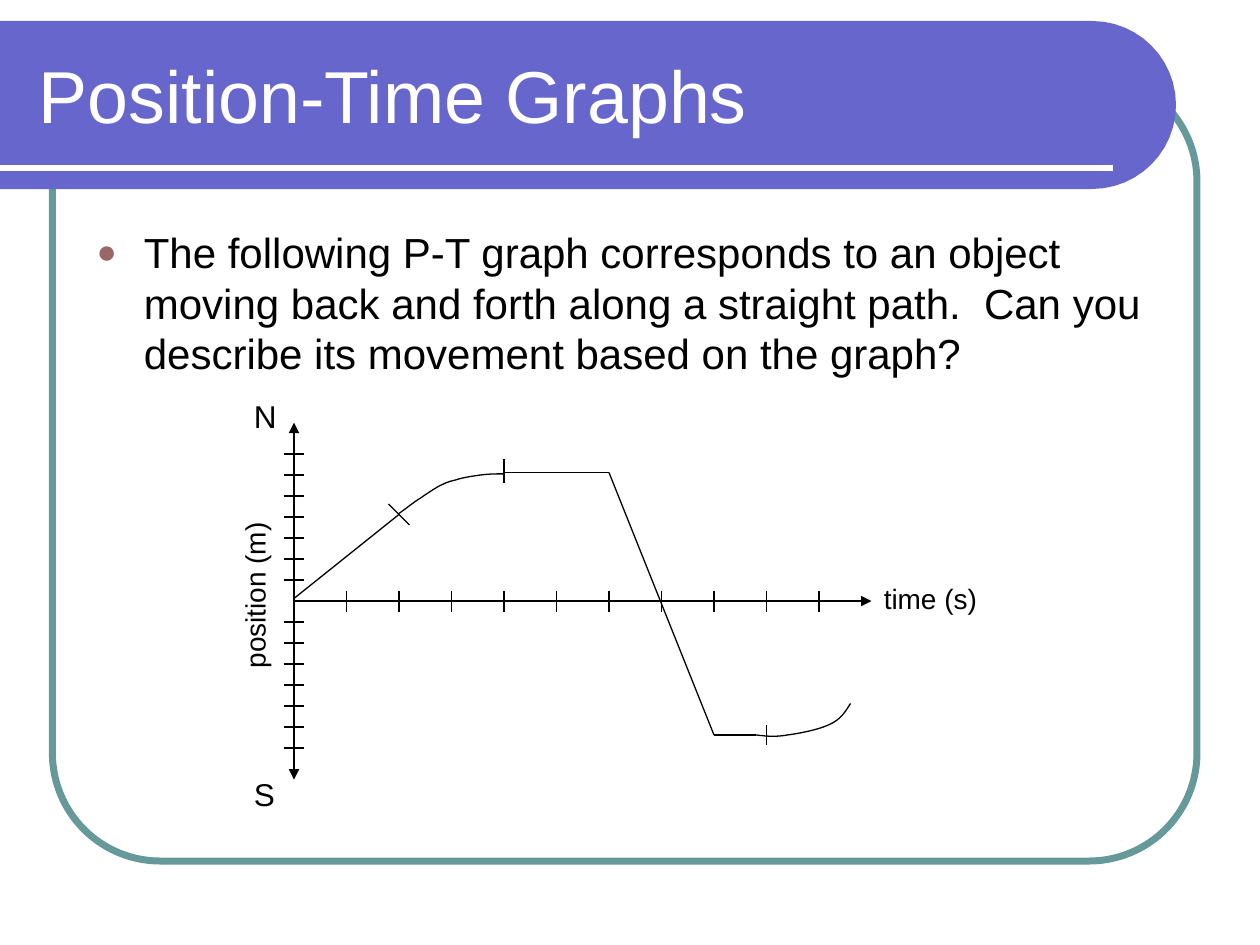
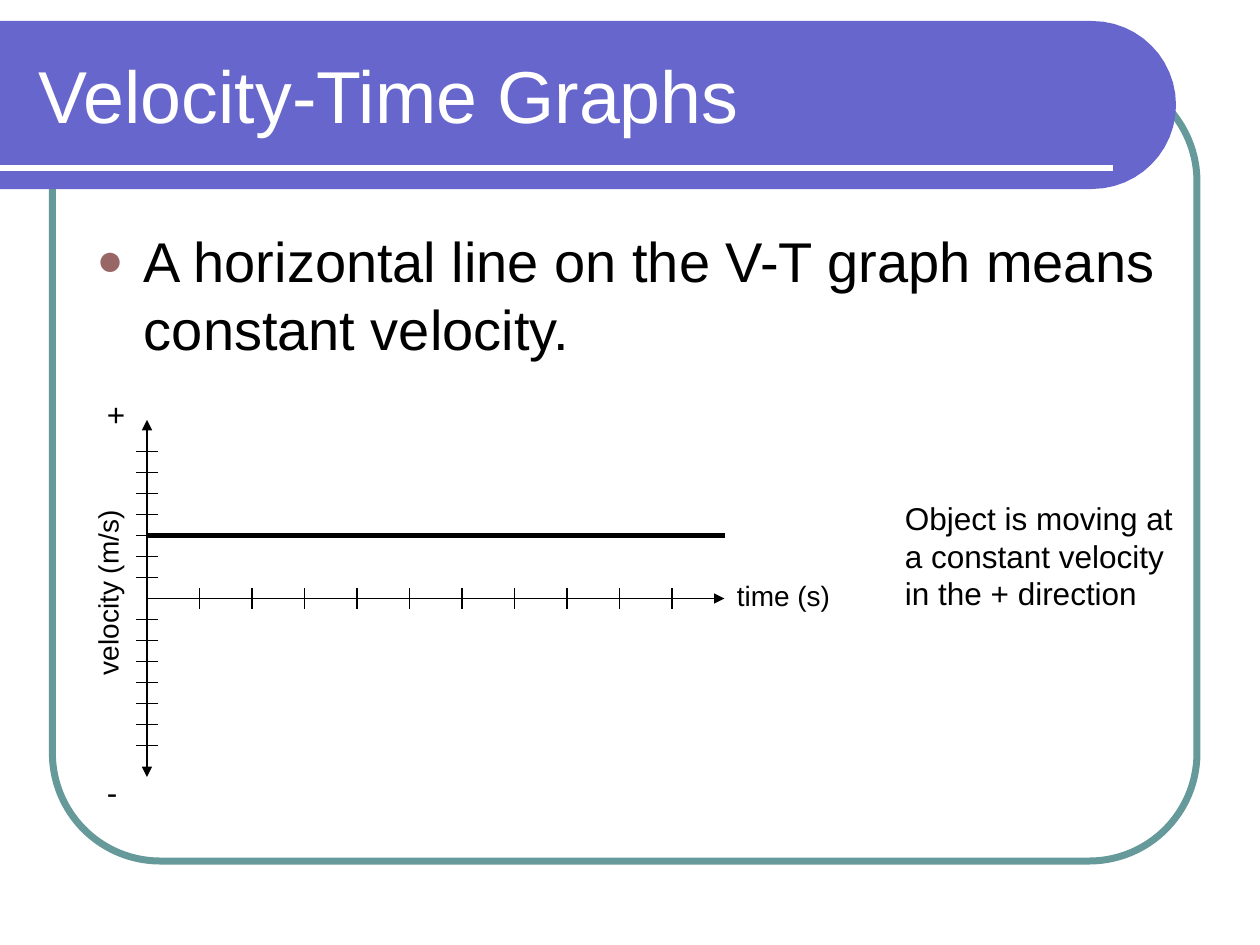
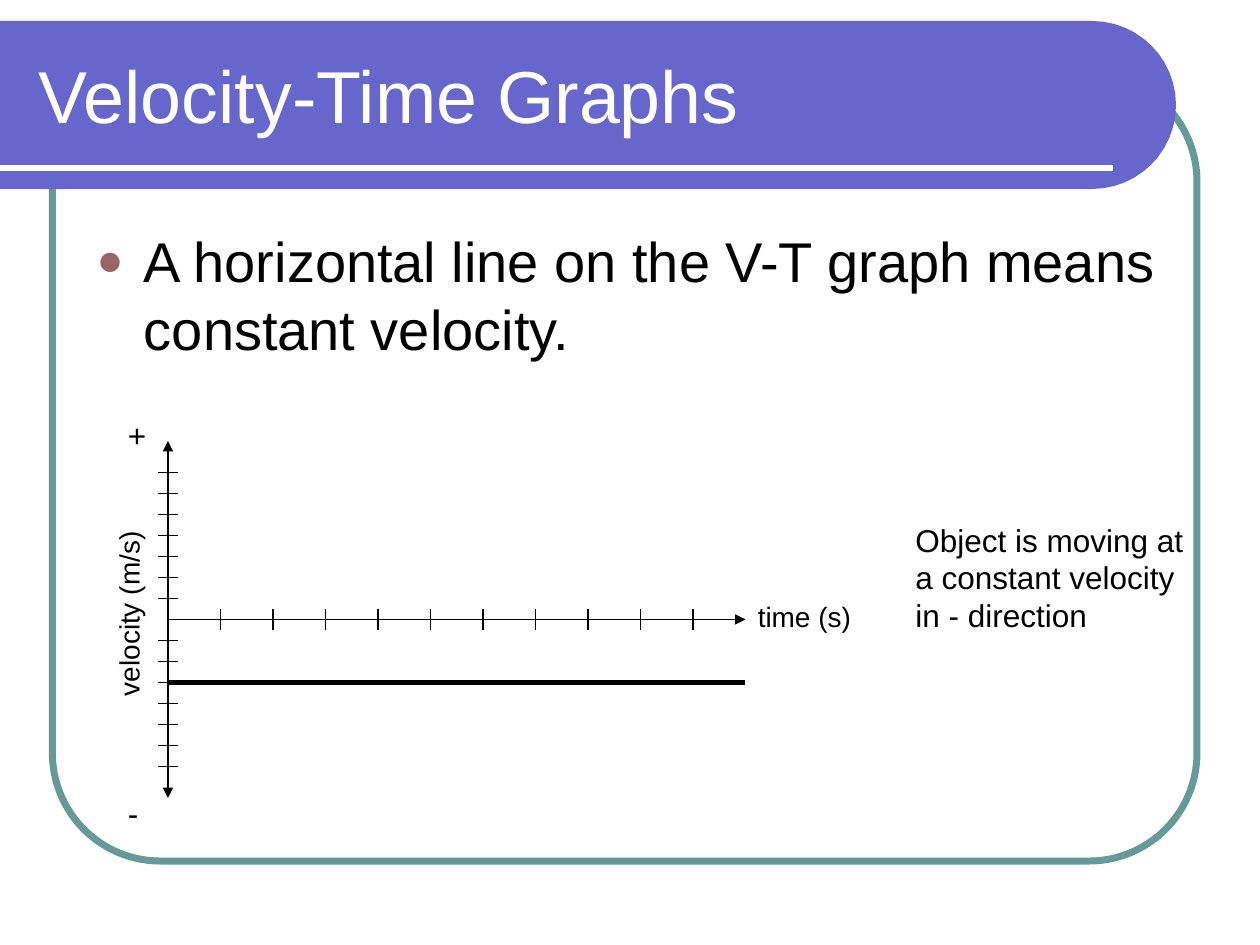
from lxml import etree
from pptx import Presentation
from pptx.dml.color import RGBColor
from pptx.enum.shapes import MSO_CONNECTOR, MSO_SHAPE
from pptx.enum.text import MSO_ANCHOR, MSO_AUTO_SIZE, PP_ALIGN
from pptx.oxml.ns import qn
from pptx.util import Pt

LINE = MSO_CONNECTOR.STRAIGHT
ROUND = MSO_SHAPE.ROUNDED_RECTANGLE
TOP, MIDDLE = MSO_ANCHOR.TOP, MSO_ANCHOR.MIDDLE
LEFT, CENTER = PP_ALIGN.LEFT, PP_ALIGN.CENTER
FIXED = MSO_AUTO_SIZE.NONE

BLACK = RGBColor(0x00, 0x00, 0x00)
WHITE = RGBColor(0xFF, 0xFF, 0xFF)
BLUE = RGBColor(0x66, 0x66, 0xCC)
TEAL = RGBColor(0x66, 0x99, 0x99)
ROSE = RGBColor(0x99, 0x66, 0x66)
FONT = "Arial"

STEP_X, STEP_Y, TICK = 30, 12, 6
REACH_X, REACH_Y = 330, 102
TICKS_X, TICKS_Y = 10, 7

BAND = [
    (624, 12), (650.5, 12), (672, 33.5), (672, 60),
    (672, 86.5), (650.5, 108), (624, 108),
]
SLOWING = [
    (59.5, -49.7), (61.7, -51.1), (68.9, -56.9), (72.5, -59),
    (76.8, -62), (79, -63.4), (82.5, -65.5),
    (85.5, -67), (88.3, -68.4), (92, -69.1),
    (96.3, -70.6), (101.3, -71.3), (106.3, -72),
    (110.7, -72.7), (117.1, -72.7), (119.3, -72.7),
]
TURNING = [
    (264, 76.5), (270, 77.2), (274.8, 77.8), (282, 76.5),
    (289.2, 75.6), (300, 73.4), (306, 70.5),
    (312.3, 67.7), (315, 63.4), (318, 58.5),
]
MOTION = [
    ((0, -1.5), (60, -49.5)),
    ((120, -67.5), (120, -81)),
    ((54, -55.5), (66, -43.5)),
    ((120, -73.5), (180, -73.5)),
    ((180, -73.5), (240, 76.5)),
    ((240, 76.5), (264, 76.5)),
    ((270, 70.5), (270, 82.5)),
]
STEADY = "A horizontal line on the V-T graph means constant velocity."

SLIDES = [
    dict(
        title="Position-Time Graphs",
        body="The following P-T graph corresponds to an object moving back and "
             "forth along a straight path.  Can you describe its movement based "
             "on the graph?",
        size=24, depth=102, origin=(168, 343.5),
        name="position (m)", ends=("N", "S"),
        lines=MOTION, curves=[SLOWING, TURNING], weight=0.75,
    ),
    dict(
        title="Velocity-Time Graphs", body=STEADY,
        size=32, depth=348, origin=(84, 342),
        name="velocity (m/s)", ends=("+", "-"),
        lines=[((0, -36), (REACH_X, -36))], curves=[], weight=3,
        note="Object is moving at a constant velocity in the + direction",
        spot=(510, 281.5),
    ),
    dict(
        title="Velocity-Time Graphs", body=STEADY,
        size=32, depth=348, origin=(96, 354),
        name="velocity (m/s)", ends=("+", "-"),
        lines=[((0, 36), (REACH_X, 36))], curves=[], weight=3,
        note="Object is moving at a constant velocity in - direction",
        spot=(516, 294),
    ),
]


def write(shape, text, size=18, color=BLACK, align=LEFT, anchor=TOP):
    frame = shape.text_frame
    frame.word_wrap = True
    frame.auto_size = FIXED
    frame.vertical_anchor = anchor
    para = frame.paragraphs[0]
    para.alignment = align
    run = para.add_run()
    run.text = text
    run.font.name = FONT
    run.font.size = Pt(size)
    run.font.color.rgb = color
    return para


def place(shape, *box):
    shape.left, shape.top, shape.width, shape.height = map(Pt, box)


def label(shapes, text, box, turn=0, **style):
    area = shapes.add_textbox(*map(Pt, box))
    area.rotation = turn
    write(area, text, **style)


def add_line(shapes, start, end, color=BLACK, weight=0.75, heads=()):
    link = shapes.add_connector(LINE, *map(Pt, (*start, *end)))
    link.line.color.rgb = color
    link.line.width = Pt(weight)
    pen = link.line._get_or_add_ln()
    for head in heads:
        etree.SubElement(pen, qn("a:" + head), type="triangle")
    etree.SubElement(link._element.spPr, qn("a:effectLst"))


def bend(knots, count=12):
    points = [knots[0]]
    for i in range(0, len(knots) - 1, 3):
        for n in range(1, count + 1):
            t = n / count
            parts = ((1 - t) ** 3, 3 * t * (1 - t) ** 2, 3 * t * t * (1 - t), t ** 3)
            points.append(tuple(
                sum(part * knot[axis] for part, knot in zip(parts, knots[i:i + 4]))
                for axis in (0, 1)
            ))
    return points


def trace(shapes, points, close=False):
    first, *rest = [(Pt(x), Pt(y)) for x, y in points]
    pen = shapes.build_freeform(*first)
    pen.add_line_segments(rest, close=close)
    shape = pen.convert_to_shape()
    shape.shadow.inherit = False
    return shape


def add_frame(slide, layout):
    group = slide.shapes.add_group_shape()
    shapes = group.shapes
    border = shapes.add_shape(ROUND, *map(Pt, (30, 42, 654, 450)))
    border.adjustments[0] = 0.137
    border.shadow.inherit = False
    border.fill.background()
    border.line.color.rgb = TEAL
    border.line.width = Pt(4)
    band = trace(shapes, [(0, 12), *bend(BAND), (0, 108)], close=True)
    band.fill.solid()
    band.fill.fore_color.rgb = BLUE
    band.line.fill.background()
    add_line(shapes, (0, 96), (636, 96), color=WHITE, weight=3)
    layout.shapes._spTree.insert(2, group._element)


def add_text(slide, data):
    title, body = slide.placeholders
    place(title, 15, 18, 631.5, 72)
    write(title, data["title"], size=42, color=WHITE, anchor=MIDDLE)
    place(body, 48, 126, 624, data["depth"])
    para = write(body, data["body"], size=data["size"])
    props = para._p.get_or_add_pPr()
    props.set("marL", str(Pt(27)))
    props.set("indent", str(Pt(-27)))
    tint = etree.SubElement(props, qn("a:buClr"))
    etree.SubElement(tint, qn("a:srgbClr"), val=str(ROSE))
    etree.SubElement(props, qn("a:buSzPct"), val="80000")
    etree.SubElement(props, qn("a:buChar"), char="●")


def add_graph(slide, data):
    left, base = data["origin"]
    shapes = slide.shapes.add_group_shape().shapes

    def at(x, y):
        return left + x, base + y

    add_line(shapes, at(0, -REACH_Y), at(0, REACH_Y), heads=("headEnd", "tailEnd"))
    add_line(shapes, at(0, 0), at(REACH_X, 0), heads=("tailEnd",))
    for n in range(1, TICKS_Y + 1):
        for y in (-n * STEP_Y, n * STEP_Y):
            add_line(shapes, at(-TICK, y), at(TICK, y))
    for n in range(1, TICKS_X + 1):
        add_line(shapes, at(n * STEP_X, -TICK), at(n * STEP_X, TICK))

    label(shapes, "time (s)", (*at(REACH_X, -15), 72, 26.5), size=16)
    label(shapes, data["name"], (*at(-79.5, -16.5), 114, 26.5),
          turn=270, size=16, align=CENTER)
    for text, y in zip(data["ends"], (-120, 96)):
        label(shapes, text, (*at(-30, y), 30, 29))

    for start, end in data["lines"]:
        add_line(shapes, at(*start), at(*end), weight=data["weight"])
    for knots in data["curves"]:
        curve = trace(shapes, [at(*point) for point in bend(knots)])
        curve.fill.background()
        curve.line.color.rgb = BLACK
        curve.line.width = Pt(0.75)


def main():
    deck = Presentation()
    deck.slide_width, deck.slide_height = Pt(720), Pt(540)
    layout = deck.slide_layouts[1]
    for i, data in enumerate(SLIDES):
        slide = deck.slides.add_slide(layout)
        if i == 0:
            add_frame(slide, layout)
        add_text(slide, data)
        add_graph(slide, data)
        if "note" in data:
            label(slide.shapes, data["note"], (*data["spot"], 168, 72))
    deck.save("out.pptx")


if __name__ == "__main__":
    main()
